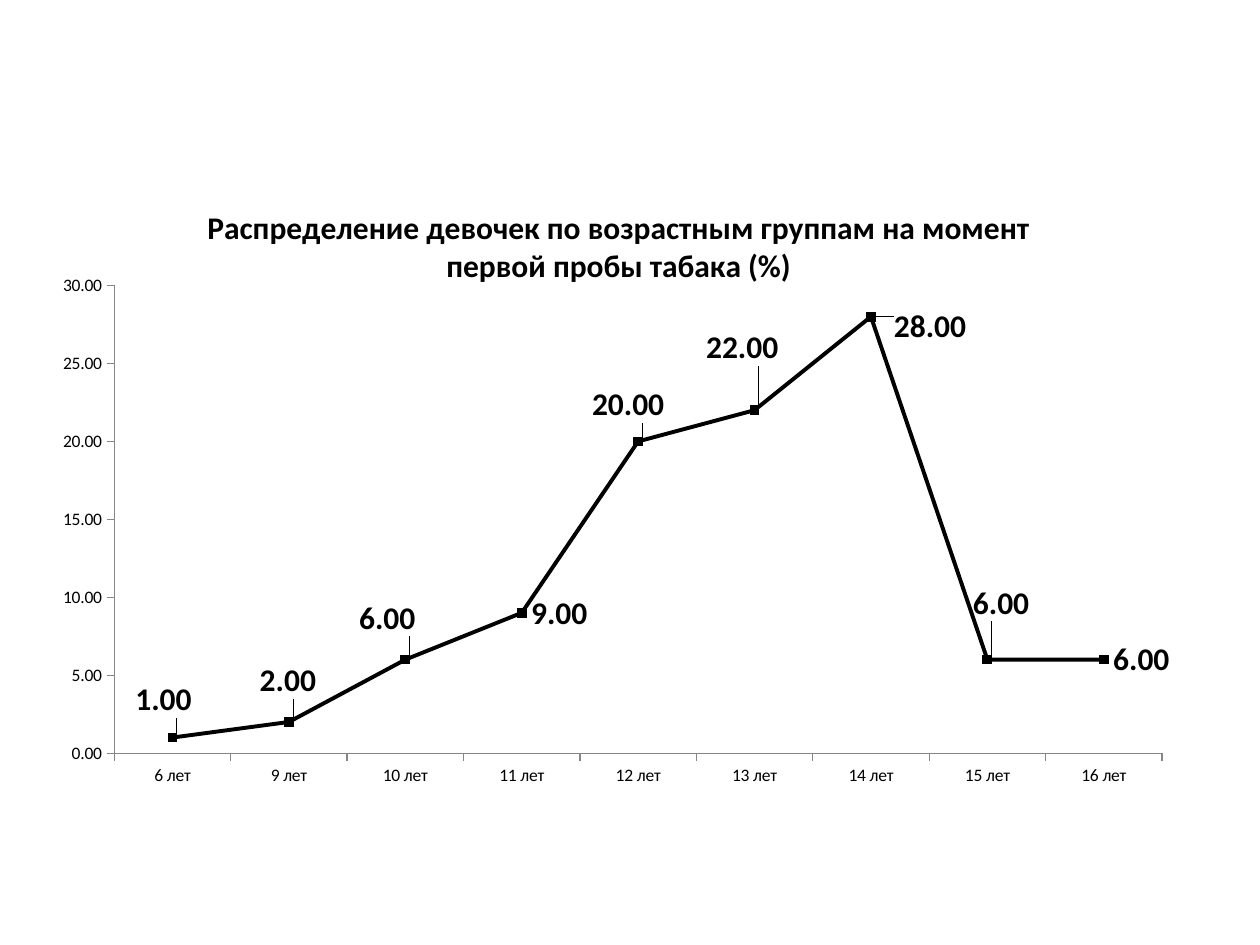
import typing

import lxml.etree
import pptx
import pptx.chart.data
import pptx.dml.color
import pptx.enum.chart
import pptx.oxml.ns
import pptx.util

Inches = pptx.util.Inches
Pt = pptx.util.Pt
qn = pptx.oxml.ns.qn
Enum = pptx.enum.chart

FONT = "Calibri"
BLACK = "000000"
GRAY = "868686"
TITLE = "Распределение девочек по возрастным группам на момент первой пробы табака (%)"
WIDTH, HEIGHT = 9, 4.95


class Point(typing.NamedTuple):
    """A value and the shift of its label, in inches, from the right of the marker."""
    age: int
    value: int
    dx: float = 0
    dy: float = 0


POINTS = [
    Point(6, 1, -0.37, -0.30),
    Point(9, 2, -0.31, -0.33),
    Point(10, 6, -0.44, -0.33),
    Point(11, 9),
    Point(12, 20, -0.44, -0.29),
    Point(13, 22, -0.46, -0.50),
    Point(14, 28, 0.11, 0.08),
    Point(15, 6, -0.19, -0.45),
    Point(16, 6),
]


def paint(fmt: typing.Any, color: str) -> None:
    """Colour a fill or a line format."""
    fill = getattr(fmt, "fill", fmt)
    fill.solid()
    fill.fore_color.rgb = pptx.dml.color.RGBColor.from_string(color)


def style(font: typing.Any, size: int, bold: bool = False) -> None:
    font.name, font.size, font.bold = FONT, Pt(size), bold
    paint(font, BLACK)


def place(parent: typing.Any, index: int, **parts: typing.Any) -> None:
    """Put a manual layout into a chart element at the given child index."""
    for old in parent.findall(qn("c:layout")):
        parent.remove(old)
    layout = lxml.etree.Element(qn("c:layout"))
    manual = lxml.etree.SubElement(layout, qn("c:manualLayout"))
    for name, value in parts.items():
        lxml.etree.SubElement(manual, qn(f"c:{name}")).set("val", str(value))
    parent.insert(index, layout)


def dress(axis: typing.Any) -> None:
    axis.has_major_gridlines = False
    axis.major_tick_mark = Enum.XL_TICK_MARK.OUTSIDE
    axis.minor_tick_mark = Enum.XL_TICK_MARK.NONE
    style(axis.tick_labels.font, 10)
    paint(axis.format.line, GRAY)
    axis.format.line.width = Pt(0.75)


def draw_line(line: typing.Any) -> None:
    line.smooth = False
    paint(line.format.line, BLACK)
    line.format.line.width = Pt(2.25)
    mark = line.marker
    mark.style, mark.size = Enum.XL_MARKER_STYLE.SQUARE, 5
    paint(mark.format, BLACK)
    paint(mark.format.line, BLACK)


def label(chart: typing.Any, line: typing.Any) -> None:
    labels = line.data_labels
    labels.show_value = True
    labels.number_format, labels.number_format_is_linked = "0.00", False
    labels.position = Enum.XL_LABEL_POSITION.RIGHT
    style(labels.font, 18, True)
    for i, point in enumerate(POINTS):
        if point.dx or point.dy:
            tag = line.points[i].data_label
            tag.position = Enum.XL_LABEL_POSITION.RIGHT
            style(tag.font, 18, True)
            node = chart._chartSpace.xpath(f".//c:dLbl[c:idx/@val='{i}']")[0]
            place(node, 1, x=round(point.dx / WIDTH, 3), y=round(point.dy / HEIGHT, 3))


def build() -> None:
    deck = pptx.Presentation()
    deck.slide_width, deck.slide_height = Inches(10), Inches(7.5)
    slide = deck.slides.add_slide(deck.slide_layouts[6])

    data = pptx.chart.data.CategoryChartData(number_format="0.00")
    data.categories = [f"{point.age} лет" for point in POINTS]
    data.add_series(TITLE, [point.value for point in POINTS])
    chart = slide.shapes.add_chart(
        Enum.XL_CHART_TYPE.LINE_MARKERS, Inches(0.43), Inches(1.39),
        Inches(WIDTH), Inches(HEIGHT), data).chart
    style(chart.font, 10)
    chart.has_legend = False
    chart.plots[0].vary_by_categories = False

    chart.has_title = True
    head = chart.chart_title.text_frame.paragraphs[0]
    head.text = TITLE
    style(head.font, 18, True)
    style(head.runs[0].font, 18, True)
    place(chart._chartSpace.xpath("./c:chart/c:title")[0], 1,
          xMode="edge", yMode="edge", x=0.13, y=0.04)
    place(chart._chartSpace.xpath(".//c:plotArea")[0], 0,
          layoutTarget="inner", xMode="edge", yMode="edge",
          x=0.053, y=0.177, w=0.924, h=0.75)

    dress(chart.category_axis)
    scale = chart.value_axis
    dress(scale)
    scale.minimum_scale, scale.maximum_scale, scale.major_unit = 0, 30, 5
    scale.tick_labels.number_format = "0.00"
    scale.tick_labels.number_format_is_linked = False

    line = chart.plots[0].series[0]
    draw_line(line)
    label(chart, line)
    deck.save("out.pptx")


if __name__ == "__main__":
    build()
